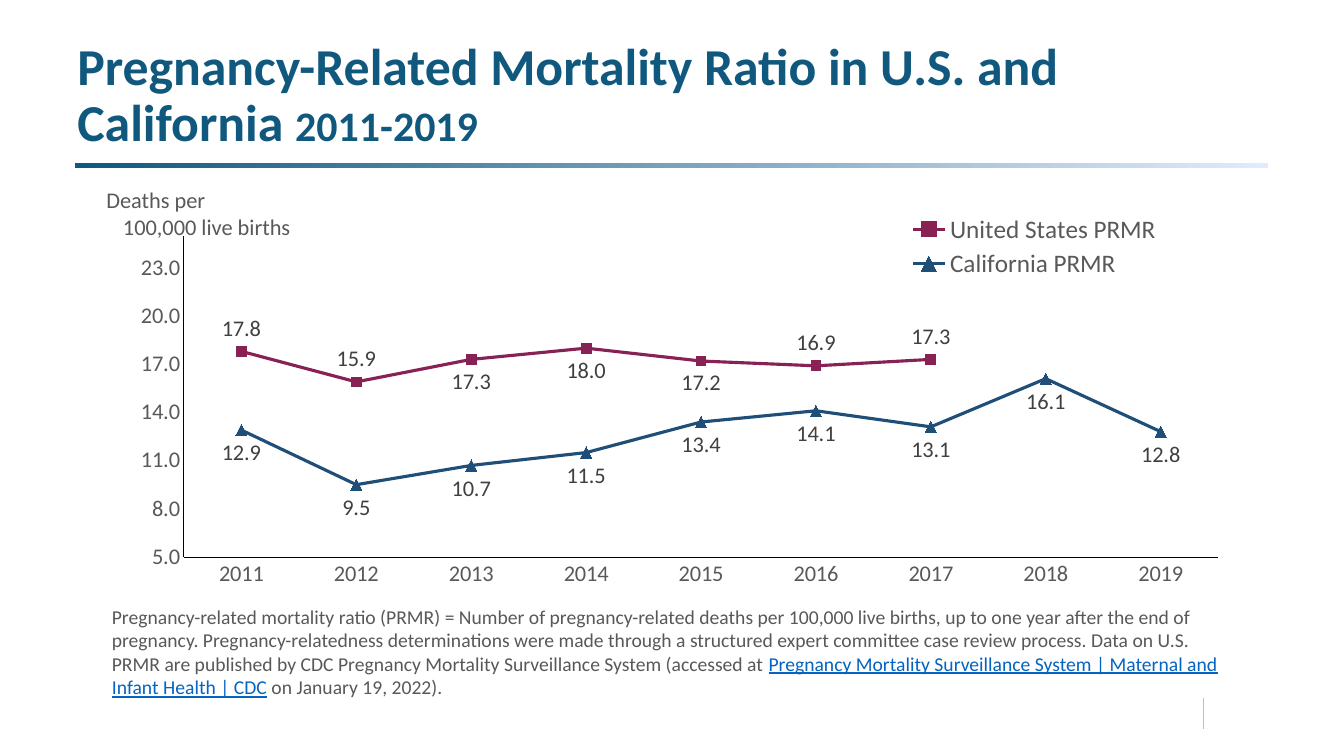
import pptx
import pptx.chart.data
import pptx.dml.color
import pptx.enum.chart
import pptx.enum.shapes
import pptx.enum.text
import pptx.oxml
import pptx.oxml.ns
import pptx.util

Cm = pptx.util.Cm
Pt = pptx.util.Pt
qn = pptx.oxml.ns.qn
LabelPosition = pptx.enum.chart.XL_LABEL_POSITION
MarkerStyle = pptx.enum.chart.XL_MARKER_STYLE

FONT = "Calibri"
TITLE_BLUE = "10587D"
GREY = "595959"
YEARS = [str(year) for year in range(2011, 2020)]
SERIES = [
    dict(name="United States PRMR", color="882255", marker_color="782164",
         marker=MarkerStyle.SQUARE, size=7, position=LabelPosition.ABOVE,
         labels_below=[2, 3, 4],
         values=[17.8, 15.9, 17.3, 18.0, 17.2, 16.9, 17.3, None, None]),
    dict(name="California PRMR", color="1F4E79", marker_color="1F4E79",
         marker=MarkerStyle.TRIANGLE, size=8, position=LabelPosition.BELOW,
         labels_below=[],
         values=[12.9, 9.5, 10.7, 11.5, 13.4, 14.1, 13.1, 16.1, 12.8]),
]


def rgb(color):
    return pptx.dml.color.RGBColor.from_string(color)


def set_attributes(target, **values):
    for name, value in values.items():
        setattr(target, name, value)


def format_font(font, size, color, **values):
    set_attributes(font, name=FONT, size=Pt(size), **values)
    font.color.rgb = rgb(color)


def format_line(line, color, width):
    line.color.rgb = rgb(color)
    line.width = Pt(width)


def add_text(slide, box, paragraphs, **frame_values):
    """Each paragraph is a list of (text, size, color, font values)."""
    frame = slide.shapes.add_textbox(*map(Cm, box)).text_frame
    set_attributes(frame, word_wrap=True, **frame_values)
    for index, runs in enumerate(paragraphs):
        paragraph = frame.add_paragraph() if index else frame.paragraphs[0]
        for text, size, color, values in runs:
            run = paragraph.add_run()
            run.text = text
            format_font(run.font, size, color, **values)
    return frame


def set_layout(parent, index, x, y, width, height, inner=False):
    """Give a chart part a fixed place, as fractions of the chart."""
    for old_layout in parent.findall(qn("c:layout")):
        parent.remove(old_layout)
    target = '<c:layoutTarget val="inner"/>' if inner else ""
    parent.insert(index, pptx.oxml.parse_xml(
        f'<c:layout {pptx.oxml.ns.nsdecls("c")}><c:manualLayout>{target}'
        '<c:xMode val="edge"/><c:yMode val="edge"/>'
        f'<c:x val="{x}"/><c:y val="{y}"/><c:w val="{width}"/><c:h val="{height}"/>'
        '</c:manualLayout></c:layout>'))


def add_header(slide, left, top, width, height):
    # Title, set on the bottom of its box
    frame = add_text(
        slide, (left, top, width, height),
        [[("Pregnancy-Related Mortality Ratio in U.S. and California ", 37,
           TITLE_BLUE, {"bold": True}),
          ("2011-2019", 30, TITLE_BLUE, {"bold": True})]],
        vertical_anchor=pptx.enum.text.MSO_ANCHOR.BOTTOM)
    frame.paragraphs[0].line_spacing = 0.9

    # Fading rule under the title
    rule = slide.shapes.add_shape(
        pptx.enum.shapes.MSO_SHAPE.RECTANGLE,
        Cm(left + 0.18), Cm(top + height + 0.13), Cm(width - 0.41), Cm(0.13))
    rule.shadow.inherit = False
    rule.line.fill.background()
    rule.fill.gradient()
    rule.fill.gradient_angle = 0
    for stop, color, position in zip(rule.fill.gradient_stops,
                                     (TITLE_BLUE, "E1EBFB"), (0, 1)):
        stop.color.rgb = rgb(color)
        stop.position = position


def format_series(series, style):
    series.smooth = False
    format_line(series.format.line, style["color"], 2.25)
    set_attributes(series.marker, style=style["marker"], size=style["size"])
    marker_format = series.marker.format
    marker_format.fill.solid()
    marker_format.fill.fore_color.rgb = rgb(style["marker_color"])
    format_line(marker_format.line, style["marker_color"], 0.75)
    labels = series.data_labels
    set_attributes(labels, show_value=True, position=style["position"],
                   number_format="0.0", number_format_is_linked=False)
    format_font(labels.font, 16, "404040")
    for point_index in style["labels_below"]:
        label = series.points[point_index].data_label
        format_font(label.font, 16, "404040")
        label.position = LabelPosition.BELOW


def add_ratio_chart(slide, left, top, width, height):
    data = pptx.chart.data.CategoryChartData(number_format="0.0")
    data.categories = YEARS
    for style in SERIES:
        data.add_series(style["name"], style["values"])
    chart = slide.shapes.add_chart(
        pptx.enum.chart.XL_CHART_TYPE.LINE_MARKERS,
        Cm(left), Cm(top), Cm(width), Cm(height), data).chart
    chart.has_title = False
    format_font(chart.font, 16, "000000")
    chart.plots[0].vary_by_categories = False
    for series, style in zip(chart.plots[0].series, SERIES):
        format_series(series, style)

    # Axes
    for axis in (chart.category_axis, chart.value_axis):
        set_attributes(axis, has_major_gridlines=False,
                       major_tick_mark=pptx.enum.chart.XL_TICK_MARK.NONE,
                       minor_tick_mark=pptx.enum.chart.XL_TICK_MARK.NONE)
        format_font(axis.tick_labels.font, 16, GREY)
        format_line(axis.format.line, "000000", 0.75)
    set_attributes(chart.value_axis, minimum_scale=5, maximum_scale=25, major_unit=3)
    set_attributes(chart.value_axis.tick_labels,
                   number_format="0.0", number_format_is_linked=False)
    set_layout(chart.plots[0]._element.getparent(), 0, 0.09, 0.15, 0.9, 0.75, True)

    # Legend over the plot, at the upper right
    chart.has_legend = True
    set_attributes(chart.legend, include_in_layout=True,
                   position=pptx.enum.chart.XL_LEGEND_POSITION.TOP)
    format_font(chart.legend.font, 18, GREY)
    set_layout(chart.legend._element, 1, 0.71, 0.09, 0.24, 0.17)

    # Heading of the value axis, second line indented
    frame = add_text(slide, (left + 0.4, top + 0.25, 6, 1.6),
                     [[("Deaths per", 16, GREY, {})],
                      [("100,000 live births", 16, GREY, {})]])
    frame.paragraphs[1]._p.get_or_add_pPr().set("marL", str(Cm(0.42)))


def add_footnote(slide, left, top, width, height):
    grey = "585858"
    add_text(slide, (left, top, width, height), [[
        ("Pregnancy-related mortality ratio (PRMR) = Number of pregnancy-related "
         "deaths per 100,000 live births, up to one year after the end of pregnancy. "
         "Pregnancy-relatedness determinations were made through a structured expert "
         "committee case review process. Data on U.S. PRMR are published by CDC "
         "Pregnancy Mortality Surveillance System (accessed at ", 14, grey, {}),
        ("Pregnancy Mortality Surveillance System | Maternal and Infant Health | CDC",
         14, "0563C1", {"underline": True}),
        (" on January 19, 2022).", 14, grey, {})]])


def add_page_mark(slide, left, top, height):
    mark = slide.shapes.add_connector(
        pptx.enum.shapes.MSO_CONNECTOR.STRAIGHT,
        Cm(left), Cm(top), Cm(left), Cm(top + height))
    format_line(mark.line, "BFBFBF", 0.5)
    mark._element.spPr.append(pptx.oxml.parse_xml(
        f'<a:effectLst {pptx.oxml.ns.nsdecls("a")}/>'))


def main():
    presentation = pptx.Presentation()
    set_attributes(presentation, slide_width=Cm(33.87), slide_height=Cm(19.05))
    slide = presentation.slides.add_slide(presentation.slide_layouts[6])
    add_page_mark(slide, 30.33, 17.58, 0.79)
    add_header(slide, 1.7, 0.91, 30.48, 3.07)
    add_footnote(slide, 2.57, 15.11, 28.96, 2.64)
    add_ratio_chart(slide, 2.03, 4.32, 28.96, 10.8)
    presentation.save("out.pptx")


if __name__ == "__main__":
    main()
